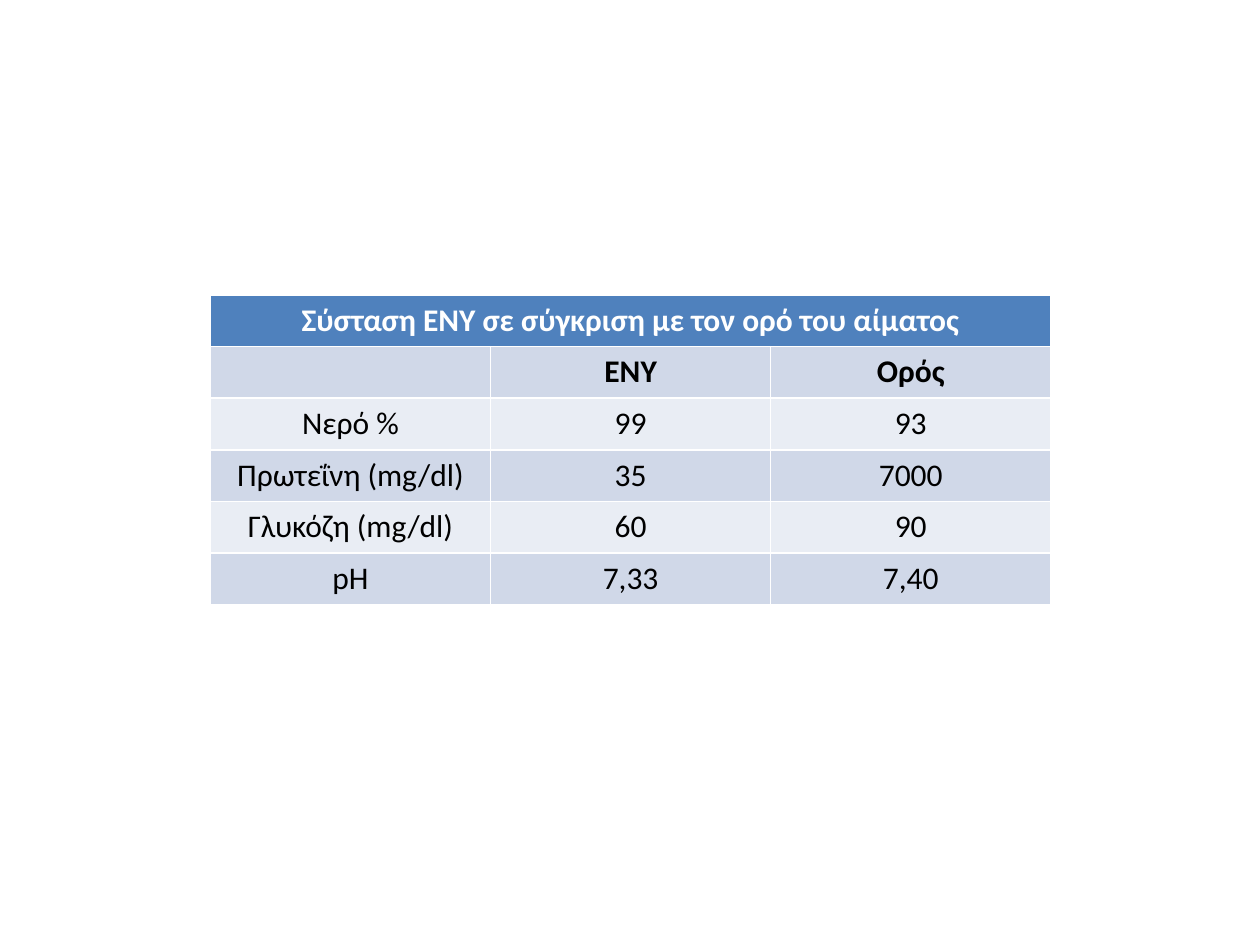
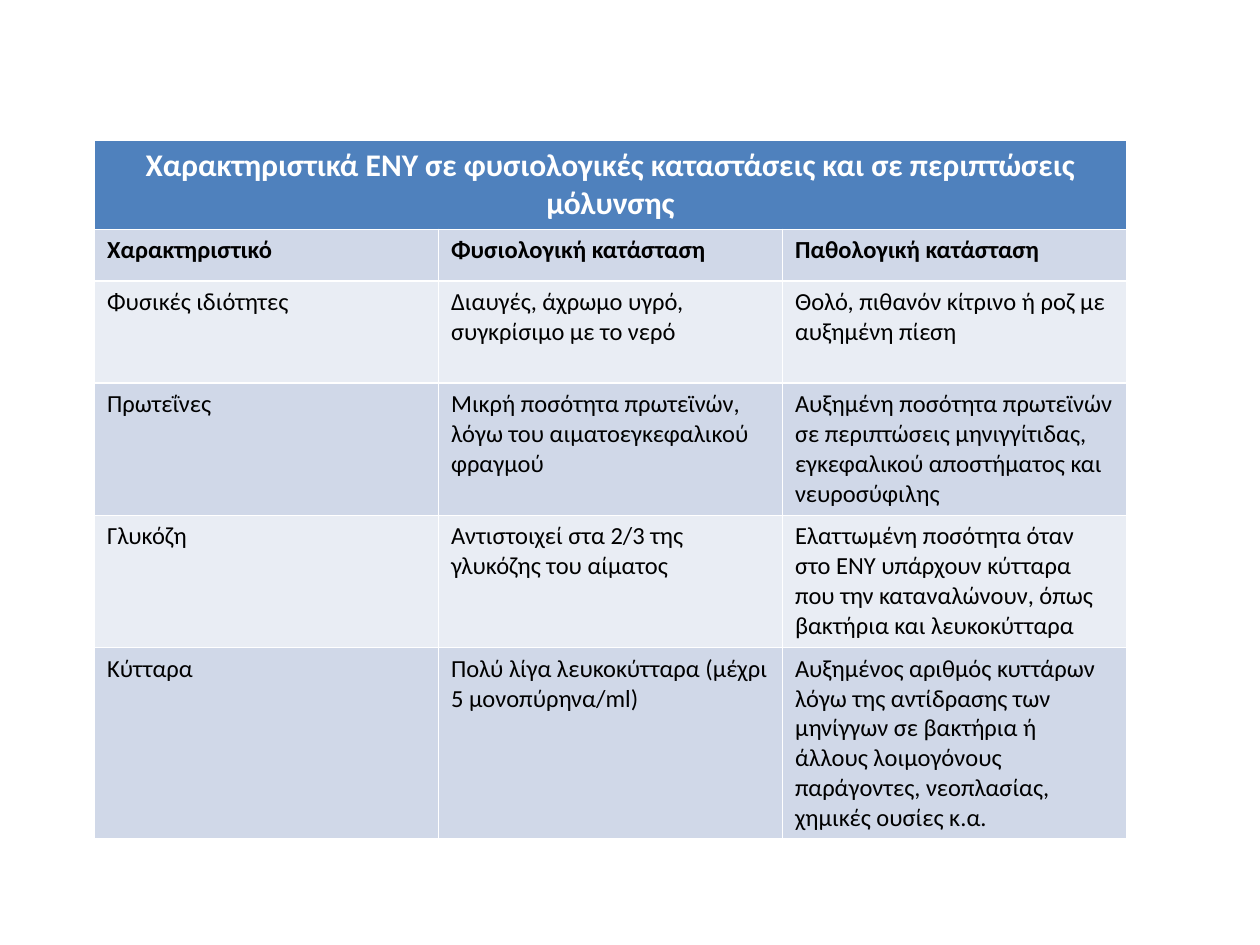
import pptx
import pptx.dml.color
import pptx.enum.text
import pptx.util

Inches = pptx.util.Inches
ALIGN = pptx.enum.text.PP_ALIGN

FONT = "Calibri"
HEAD_FILL = "4F81BD"
BANDS = ("D0D8E8", "E9EDF4")
WHITE, BLACK = "FFFFFF", "000000"

SERUM_TITLE = "Σύσταση ΕΝΥ σε σύγκριση με τον ορό του αίματος"
SERUM_ROWS = [
    ("", "ΕΝΥ", "Ορός"),
    ("Νερό %", "99", "93"),
    ("Πρωτεΐνη (mg/dl)", "35", "7000"),
    ("Γλυκόζη (mg/dl)", "60", "90"),
    ("pH", "7,33", "7,40"),
]

STATE_TITLE = ("Χαρακτηριστικά ΕΝΥ σε φυσιολογικές καταστάσεις "
               "και σε περιπτώσεις μόλυνσης")
STATE_ROWS = [
    ("Χαρακτηριστικό", "Φυσιολογική κατάσταση", "Παθολογική κατάσταση"),
    ("Φυσικές ιδιότητες",
     "Διαυγές, άχρωμο υγρό, συγκρίσιμο με το νερό",
     "Θολό, πιθανόν κίτρινο ή ροζ με αυξημένη πίεση"),
    ("Πρωτεΐνες",
     "Μικρή ποσότητα πρωτεϊνών, λόγω του αιματοεγκεφαλικού φραγμού",
     "Αυξημένη ποσότητα πρωτεϊνών σε περιπτώσεις μηνιγγίτιδας, "
     "εγκεφαλικού αποστήματος και νευροσύφιλης"),
    ("Γλυκόζη",
     "Αντιστοιχεί στα 2/3 της γλυκόζης του αίματος",
     "Ελαττωμένη ποσότητα όταν στο ΕΝΥ υπάρχουν κύτταρα που την "
     "καταναλώνουν, όπως βακτήρια και λευκοκύτταρα"),
    ("Κύτταρα",
     "Πολύ λίγα λευκοκύτταρα (μέχρι 5 μονοπύρηνα/ml)",
     "Αυξημένος αριθμός κυττάρων λόγω της αντίδρασης των μηνίγγων σε "
     "βακτήρια ή άλλους λοιμογόνους παράγοντες, νεοπλασίας, "
     "χημικές ουσίες κ.α."),
]


def color(code):
    return pptx.dml.color.RGBColor.from_string(code)


def fill_cell(cell, text, back, ink, size, bold, align):
    cell.fill.solid()
    cell.fill.fore_color.rgb = color(back)
    cell.text = text
    para = cell.text_frame.paragraphs[0]
    para.alignment = align
    para.font.name = FONT
    para.font.size = pptx.util.Pt(size)
    para.font.bold = bold
    para.font.color.rgb = color(ink)


def add_grid(deck, title, rows, left, top, width, heights, size, align):
    """Add a slide with a table: merged title, bold heads, banded rows.

    The default table style draws the white rules between the cells.
    """
    slide = deck.slides.add_slide(deck.slide_layouts[6])
    count = len(rows[0])
    table = slide.shapes.add_table(
        len(rows) + 1, count, Inches(left), Inches(top),
        Inches(width), Inches(sum(heights))).table
    for column in table.columns:
        column.width = Inches(width / count)
    for row, height in zip(table.rows, heights):
        row.height = Inches(height)

    head = table.cell(0, 0)
    head.merge(table.cell(0, count - 1))
    fill_cell(head, title, HEAD_FILL, WHITE, 18, True, ALIGN.CENTER)
    for r, texts in enumerate(rows):
        for c, text in enumerate(texts):
            fill_cell(table.cell(r + 1, c), text, BANDS[r % 2], BLACK,
                      size, r == 0, align)


def main():
    deck = pptx.Presentation()
    deck.slide_width, deck.slide_height = Inches(10), Inches(7.5)
    add_grid(deck, SERUM_TITLE, SERUM_ROWS, 1.67, 2.34, 6.67,
             [0.41] * 6, 18, ALIGN.CENTER)
    add_grid(deck, STATE_TITLE, STATE_ROWS, 0.75, 1.11, 8.19,
             [0.7, 0.41, 0.81, 1.05, 1.05, 1.52], 14, ALIGN.LEFT)
    deck.save("out.pptx")


if __name__ == "__main__":
    main()
